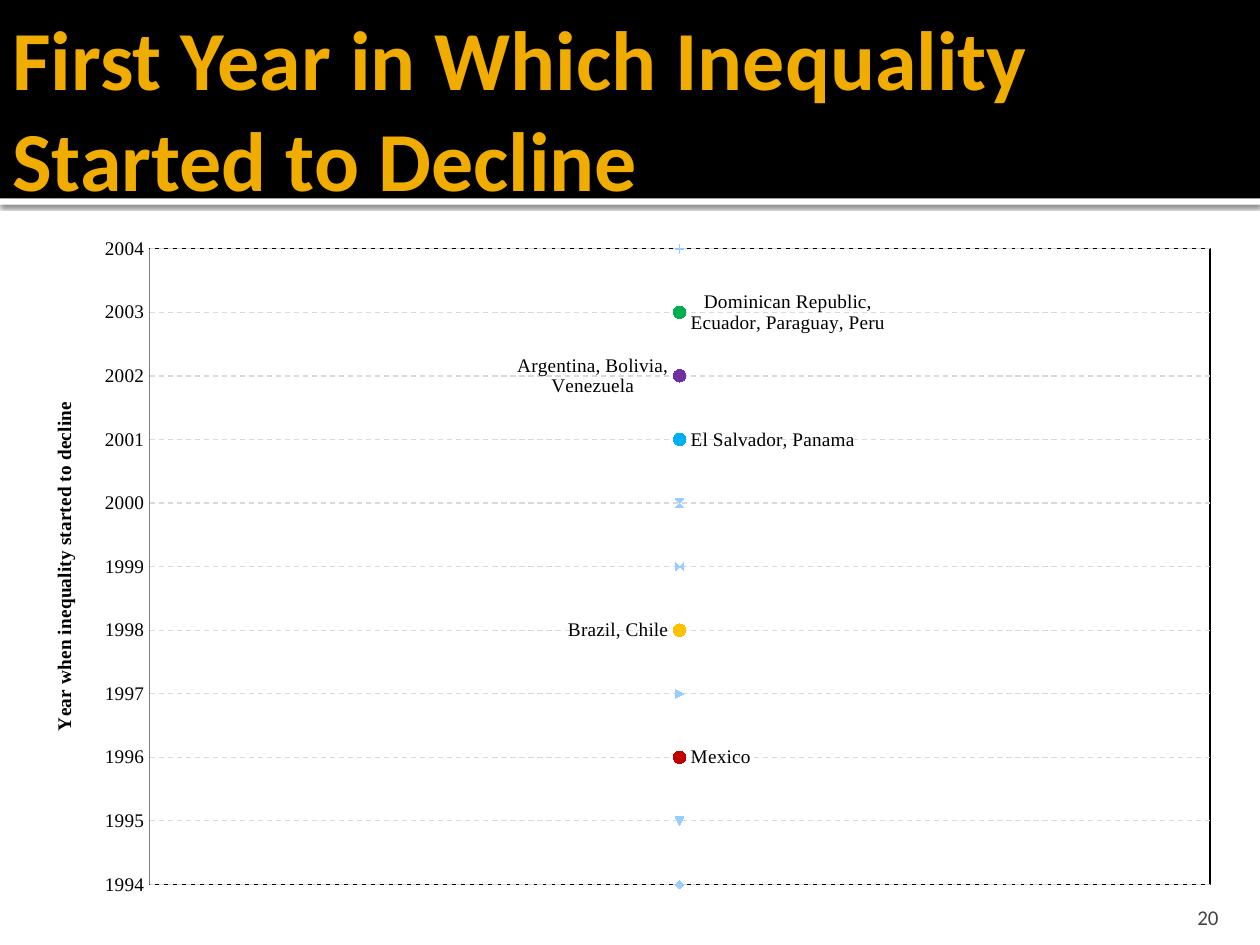
from lxml import etree
from pptx import Presentation
from pptx.chart.data import XyChartData
from pptx.dml.color import RGBColor
from pptx.enum.chart import XL_CHART_TYPE as ChartType, XL_MARKER_STYLE as Marker
from pptx.enum.chart import XL_TICK_MARK as Tick
from pptx.enum.dml import MSO_LINE
from pptx.enum.shapes import MSO_SHAPE as Shape
from pptx.enum.text import MSO_ANCHOR as Anchor, PP_ALIGN as Align
from pptx.oxml import parse_xml
from pptx.oxml.ns import nsdecls, qn
from pptx.util import Inches, Pt

W, H = 10, 7.5
BLACK = RGBColor(0x00, 0x00, 0x00)
WHITE = RGBColor(0xFF, 0xFF, 0xFF)
GOLD = RGBColor(0xF0, 0xAD, 0x00)
GREY = RGBColor(0x45, 0x45, 0x45)
GRID = RGBColor(0xD9, 0xD9, 0xD9)
AXIS = RGBColor(0x80, 0x80, 0x80)
PALE = RGBColor(0x99, 0xCC, 0xFF)
RED = RGBColor(0xC0, 0x00, 0x00)
AMBER = RGBColor(0xFF, 0xC0, 0x00)
BLUE = RGBColor(0x00, 0xB0, 0xF0)
PURPLE = RGBColor(0x70, 0x30, 0xA0)
GREEN = RGBColor(0x00, 0xB0, 0x50)

FIRST, LAST = 1994, 2004
# year: countries, marker colour, label side
DECLINES = {
    1996: ("Mexico", RED, "r"),
    1998: ("Brazil, Chile", AMBER, "l"),
    2001: ("El Salvador, Panama", BLUE, "r"),
    2002: ("Argentina, Bolivia, Venezuela", PURPLE, "l"),
    2003: ("Dominican Republic, Ecuador, Paraguay, Peru", GREEN, "r"),
}


def add_bar(s, top, height, color):
    sp = s.shapes.add_shape(Shape.RECTANGLE, 0, Inches(top), Inches(W), Inches(height))
    sp.shadow.inherit = False
    sp.fill.solid()
    sp.fill.fore_color.rgb = color
    sp.line.fill.background()
    return sp


def add_shadow(sp):
    effects = sp._element.spPr.find(qn("a:effectLst"))
    effects.append(parse_xml(
        f'<a:outerShdw {nsdecls("a")} blurRad="{Pt(2.5)}" dist="{Pt(0.8)}" dir="5400000">'
        '<a:srgbClr val="000000"><a:alpha val="60000"/></a:srgbClr></a:outerShdw>'))


def add_text(s, text, box, size, color, anchor, align, insets, bold=False):
    tf = s.shapes.add_textbox(*map(Inches, box)).text_frame
    tf.word_wrap = True
    tf.vertical_anchor = anchor
    tf.margin_left, tf.margin_top, tf.margin_right, tf.margin_bottom = map(Inches, insets)
    p = tf.paragraphs[0]
    p.alignment = align
    r = p.add_run()
    r.text = text
    r.font.name, r.font.size, r.font.bold = "Calibri", Pt(size), bold
    r.font.color.rgb = color


def add_name_label(series, side):
    flags = {"LegendKey": 0, "Val": 0, "CatName": 0, "SerName": 1, "Percent": 0, "BubbleSize": 0}
    shows = "".join(f'<c:show{name} val="{on}"/>' for name, on in flags.items())
    labels = parse_xml(f'<c:dLbls {nsdecls("c")}><c:dLblPos val="{side}"/>{shows}</c:dLbls>')
    series._element.find(qn("c:xVal")).addprevious(labels)


def style_series(series, year):
    series.format.line.fill.background()
    _, color, side = DECLINES.get(year, (None, PALE, None))
    marker = series.marker
    if side:
        marker.style, marker.size = Marker.CIRCLE, 7
        add_name_label(series, side)
    marker.format.fill.solid()
    marker.format.fill.fore_color.rgb = color
    marker.format.line.color.rgb = color


def style_axes(chart):
    x, y = chart.category_axis, chart.value_axis
    x.minimum_scale, x.maximum_scale, x.major_unit = 0, 2, 1
    x.has_major_gridlines = False
    x.visible = False

    y.minimum_scale, y.maximum_scale, y.major_unit = FIRST, LAST, 1
    y.major_tick_mark = y.minor_tick_mark = Tick.NONE
    y.tick_labels.number_format = "0"
    y.tick_labels.number_format_is_linked = False
    y.format.line.color.rgb = AXIS
    y.has_major_gridlines = True
    line = y.major_gridlines.format.line
    line.color.rgb, line.width, line.dash_style = GRID, Pt(0.75), MSO_LINE.DASH
    r = y.axis_title.text_frame.paragraphs[0].add_run()
    r.text = "Year when inequality started to decline"
    r.font.name, r.font.size, r.font.bold = "Times New Roman", Pt(11), True
    r.font.color.rgb = BLACK


def frame_xml(fill, line):
    return parse_xml(
        f'<c:spPr {nsdecls("c", "a")}>{fill}<a:ln w="{Pt(0.75)}"><a:solidFill>'
        f'<a:srgbClr val="{line}"/></a:solidFill></a:ln></c:spPr>')


def style_areas(chart):
    # Inner plot area as shares of the chart
    plot = chart._chartSpace.chart.plotArea
    for old in plot.findall(qn("c:layout")):
        plot.remove(old)
    shares = {"x": 0.102, "y": 0.035, "w": 0.877, "h": 0.931}
    values = "".join(f'<c:{key} val="{share}"/>' for key, share in shares.items())
    plot.insert(0, parse_xml(
        f'<c:layout {nsdecls("c")}><c:manualLayout><c:layoutTarget val="inner"/>'
        f'<c:xMode val="edge"/><c:yMode val="edge"/>{values}</c:manualLayout></c:layout>'))
    plot.append(frame_xml("<a:noFill/>", BLACK))
    white = f'<a:solidFill><a:srgbClr val="{WHITE}"/></a:solidFill>'
    chart._chartSpace.chart.addnext(frame_xml(white, WHITE))


def add_year_chart(s, box):
    years = range(FIRST, LAST + 1)
    data = XyChartData()
    for i, year in enumerate(years, 1):
        name = DECLINES[year][0] if year in DECLINES else f"Series {i}"
        data.add_series(name).add_data_point(1, year)
    chart = s.shapes.add_chart(ChartType.XY_SCATTER, *map(Inches, box), data).chart
    chart.has_legend = chart.has_title = False
    chart.font.name, chart.font.size = "Times New Roman", Pt(11)
    chart.font.color.rgb = BLACK
    chart.plots[0].vary_by_categories = False
    for series, year in zip(chart.plots[0].series, years):
        style_series(series, year)
    style_axes(chart)
    style_areas(chart)


def main():
    prs = Presentation()
    prs.slide_width, prs.slide_height = Inches(W), Inches(H)
    s = prs.slides.add_slide(prs.slide_layouts[6])

    # Title band with a shadowed white rule below
    band = 0.21 * H
    add_shadow(add_bar(s, band, 0.05, WHITE))
    add_bar(s, 0, band, BLACK)
    add_text(s, "First Year in Which Inequality Started to Decline", (0, 0, W, 1.7),
             48, GOLD, Anchor.MIDDLE, Align.LEFT, (0.1, 0.05, 0.05, 0.05), bold=True)

    # Slide number
    add_text(s, "20", (8.97, 7.08, 0.8, 0.3), 12, GREY, Anchor.BOTTOM, Align.RIGHT,
             (0.1, 0.05, 0.1, 0))

    # Years in which the decline began
    add_year_chart(s, (0.2, 1.78, 9.61, 5.43))
    prs.save("out.pptx")


if __name__ == "__main__":
    main()
